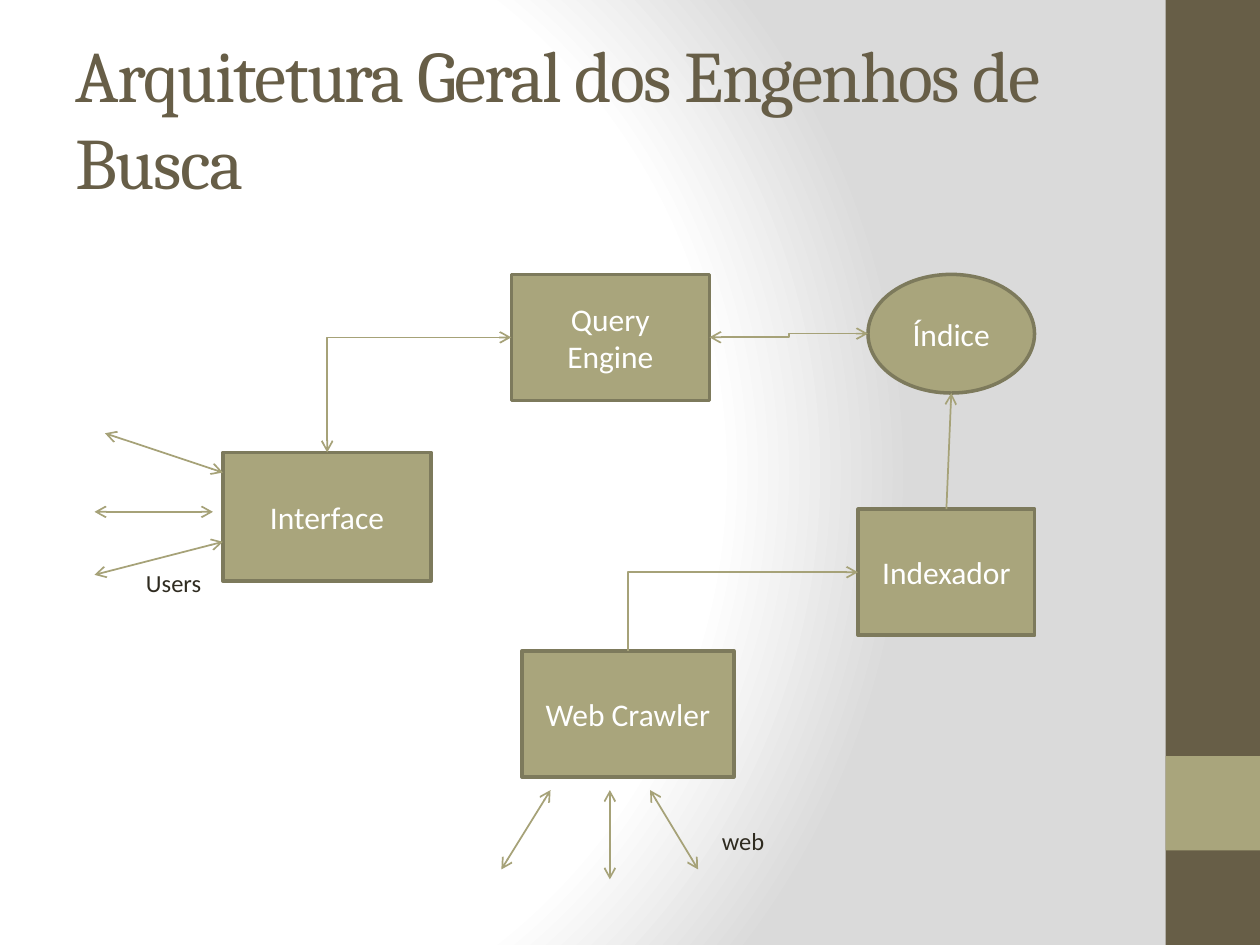
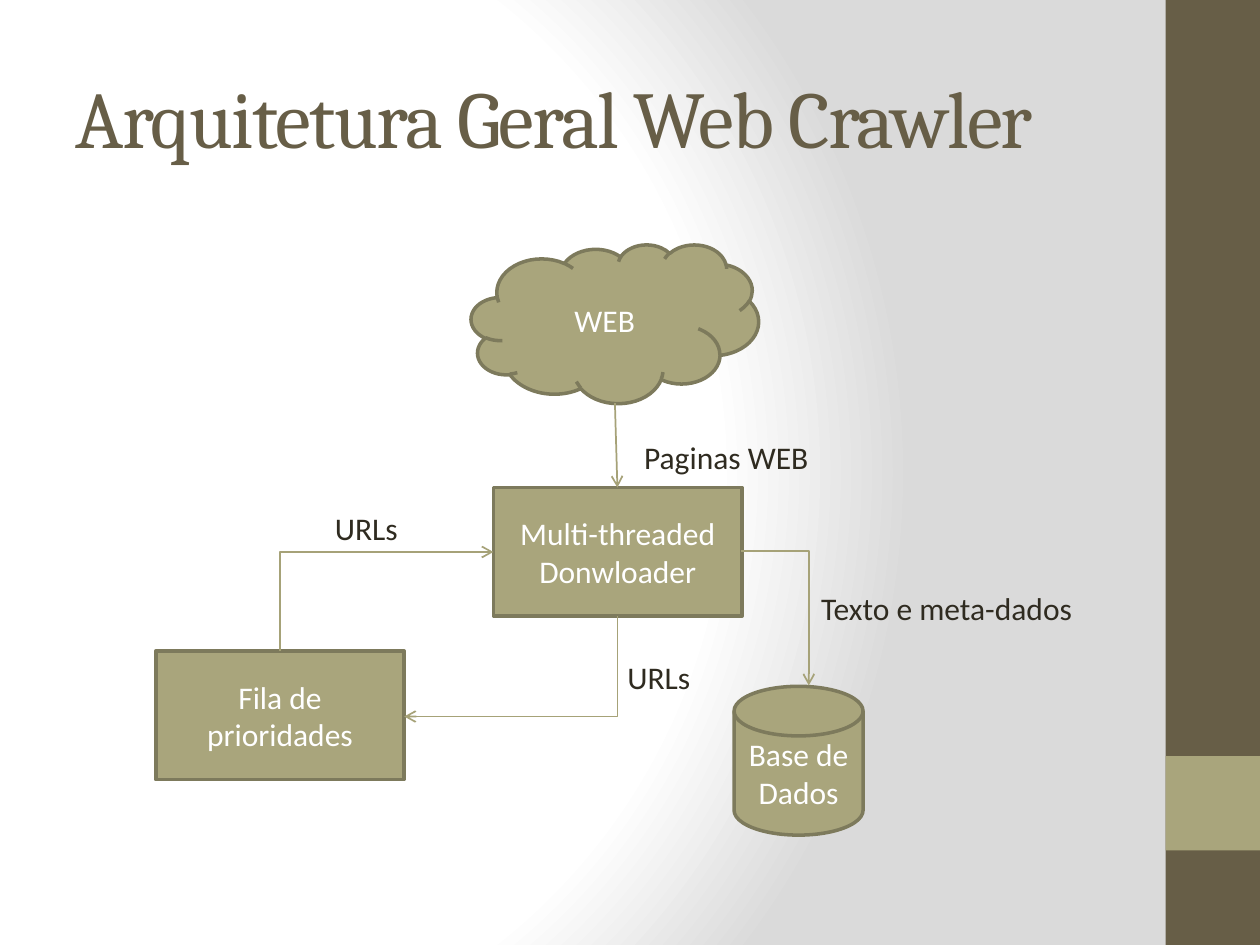
import pptx
import pptx.util
import pptx.dml.color
import pptx.enum.shapes
import pptx.enum.text
import pptx.oxml
import pptx.oxml.ns

Pt = pptx.util.Pt
RGBColor = pptx.dml.color.RGBColor
Shape = pptx.enum.shapes.MSO_SHAPE
Connector = pptx.enum.shapes.MSO_CONNECTOR
Align = pptx.enum.text.PP_ALIGN
Anchor = pptx.enum.text.MSO_ANCHOR
AutoSize = pptx.enum.text.MSO_AUTO_SIZE
qn = pptx.oxml.ns.qn

BROWN = RGBColor(0x67, 0x5E, 0x47)
OLIVE = RGBColor(0xA9, 0xA5, 0x7C)
OUTLINE = RGBColor(0x7D, 0x7A, 0x5C)
ARROW = RGBColor(0xA6, 0xA2, 0x78)
INK = RGBColor(0x2F, 0x2B, 0x20)
WHITE = RGBColor(0xFF, 0xFF, 0xFF)
GREY = RGBColor(0xDA, 0xDA, 0xDA)


def write_text(frame, text, size=18, color=WHITE, font="Calibri",
               align=Align.CENTER, anchor=Anchor.MIDDLE, spacing=None):
    """Fill a text frame, one paragraph per line of text."""
    frame.word_wrap = True
    frame.vertical_anchor = anchor
    frame.text = text
    for paragraph in frame.paragraphs:
        paragraph.alignment = align
        for run in paragraph.runs:
            run.font.size = Pt(size)
            run.font.name = font
            run.font.color.rgb = color
            if spacing:
                run.font._element.set("spc", str(spacing * 100))


class Deck:
    """Holds the presentation style and the slide being drawn."""

    def __init__(self):
        self.presentation = pptx.Presentation()
        self.presentation.slide_width = Pt(720)
        self.presentation.slide_height = Pt(540)
        self.slide = None
        self.set_background()

    def set_background(self):
        """Give the slide master its circular gradient."""
        master = self.presentation.slide_master
        master.background.fill.solid()
        stops = "".join(
            f'<a:gs pos="{percent * 1000}"><a:srgbClr val="{color}"/></a:gs>'
            for percent, color in ((0, WHITE), (75, WHITE), (100, GREY)))
        gradient = pptx.oxml.parse_xml(
            f'<a:gradFill {pptx.oxml.ns.nsdecls("a")} rotWithShape="1">'
            f'<a:gsLst>{stops}</a:gsLst><a:path path="circle">'
            '<a:fillToRect l="20000" t="50000" r="100000" b="50000"/>'
            '</a:path></a:gradFill>')
        properties = master._element.find(".//" + qn("p:bgPr"))
        properties.replace(properties[0], gradient)

    def add_slide(self, title, size):
        """Start a slide with its side bands and title."""
        layout = self.presentation.slide_layouts.get_by_name("Title Only")
        self.slide = self.presentation.slides.add_slide(layout)
        self.add_shape(Shape.RECTANGLE, 666, 0, 54, 540, fill=BROWN)
        self.add_shape(Shape.RECTANGLE, 666, 432, 54, 54)
        shape = self.slide.shapes.title
        shape.left, shape.top, shape.width, shape.height = map(Pt, (36, 21.6, 600, 90))
        write_text(shape.text_frame, title, size=size, color=BROWN,
                   font="Cambria", align=Align.LEFT, spacing=-1)
        shape.text_frame.auto_size = AutoSize.NONE

    def add_shape(self, kind, left, top, width, height, fill=OLIVE):
        """Draw a filled preset shape without outline."""
        shape = self.slide.shapes.add_shape(kind, Pt(left), Pt(top), Pt(width), Pt(height))
        shape.shadow.inherit = False
        shape.fill.solid()
        shape.fill.fore_color.rgb = fill
        shape.line.fill.background()
        return shape

    def add_node(self, text, left, top, width, height, kind=Shape.RECTANGLE):
        """Draw an outlined diagram node with centred text."""
        shape = self.add_shape(kind, left, top, width, height)
        shape.line.color.rgb = OUTLINE
        shape.line.width = Pt(2)
        write_text(shape.text_frame, text)

    def add_label(self, text, left, top, width, height=29, size=18):
        """Write a free label beside an arrow."""
        box = self.slide.shapes.add_textbox(Pt(left), Pt(top), Pt(width), Pt(height))
        write_text(box.text_frame, text, size=size, color=INK,
                   align=Align.LEFT, anchor=Anchor.TOP)
        box.text_frame.auto_size = AutoSize.SHAPE_TO_FIT_TEXT

    def add_arrow(self, start, end, heads=("tailEnd",), kind=Connector.STRAIGHT):
        """Draw a connector with arrowheads at the named ends."""
        connector = self.slide.shapes.add_connector(kind, *map(Pt, start + end))
        connector.line.color.rgb = ARROW
        connector.line.width = Pt(1)
        outline = connector.line._get_or_add_ln()
        for head in heads:
            outline.append(outline.makeelement(qn("a:" + head), {"type": "arrow"}))
        properties = connector._element.spPr
        properties.append(properties.makeelement(qn("a:effectLst"), {}))
        return connector

    def add_double_arrow(self, start, end, kind=Connector.STRAIGHT):
        """Draw a connector with arrowheads at both ends."""
        return self.add_arrow(start, end, ("headEnd", "tailEnd"), kind)

    def add_corner(self, start, end, heads):
        """Draw a connector that runs across, then turns once."""
        connector = self.add_arrow(start, end, heads, Connector.ELBOW)
        connector._element.spPr.find(qn("a:prstGeom")).set("prst", "bentConnector2")


def build_search_engine(deck):
    """Draw the general architecture of search engines."""
    deck.add_slide("Arquitetura Geral dos Engenhos de Busca", 41.4)
    deck.add_node("Interface", 127.4, 258.5, 119, 73.5)
    deck.add_node("Query\vEngine", 292.2, 156.8, 113.2, 72)
    deck.add_node("Indexador", 490.3, 291, 101, 72)
    deck.add_node("Índice", 496, 156.8, 95.2, 67.8, Shape.OVAL)
    deck.add_node("Web Crawler", 298.2, 372, 121.2, 72)

    deck.add_corner((292.2, 192.8), (187, 258.5), ("headEnd", "tailEnd"))
    deck.add_double_arrow((405.4, 192.8), (496, 190.7), Connector.ELBOW)
    deck.add_arrow((540.8, 291), (543.6, 224.6))
    deck.add_corner((490.3, 327), (358.8, 372), ("headEnd",))

    for start, end in (((127.4, 270), (60, 247.6)),
                       ((121.7, 292.5), (54, 292.5)),
                       ((127.4, 309.6), (54, 328.5)),
                       ((314.6, 451.5), (286.5, 496.8)),
                       ((348.5, 451.5), (348.5, 502.5)),
                       ((371.5, 451.5), (398.9, 496.8))):
        deck.add_double_arrow(start, end)
    deck.add_label("Users", 76.3, 321.1, 57, 24.5, size=14)
    deck.add_label("web", 405.4, 468.7, 62.6, 24.5, size=14)


def build_web_crawler(deck):
    """Draw the general architecture of a web crawler."""
    deck.add_slide("Arquitetura Geral Web Crawler", 46)
    deck.add_node("WEB", 269.3, 139.7, 164.2, 90.7, Shape.CLOUD)
    deck.add_node("Multi-threaded\nDonwloader", 282, 278.6, 142, 73.5)
    deck.add_node("Fila de prioridades", 89, 372, 142, 73.5)
    deck.add_node("Base de Dados", 419.5, 392.2, 73.7, 85, Shape.FLOWCHART_MAGNETIC_DISK)

    deck.add_arrow((351.4, 230.4), (352.8, 278.6))
    deck.add_corner((423.7, 315), (462.2, 391.7), ("tailEnd",))
    deck.add_corner((231, 409.5), (352.8, 352), ("headEnd",))
    deck.add_corner((282, 315.4), (160, 372), ("headEnd",))

    deck.add_label("URLs", 351.4, 372.5, 54)
    deck.add_label("URLs", 184.3, 287.3, 62.6)
    deck.add_label("Texto e meta-dados", 462.2, 332.9, 158.4)
    deck.add_label("Paginas WEB", 361, 246.5, 112.3)


def main():
    """Build both slides and save the presentation."""
    deck = Deck()
    build_search_engine(deck)
    build_web_crawler(deck)
    deck.presentation.save("out.pptx")


if __name__ == "__main__":
    main()
